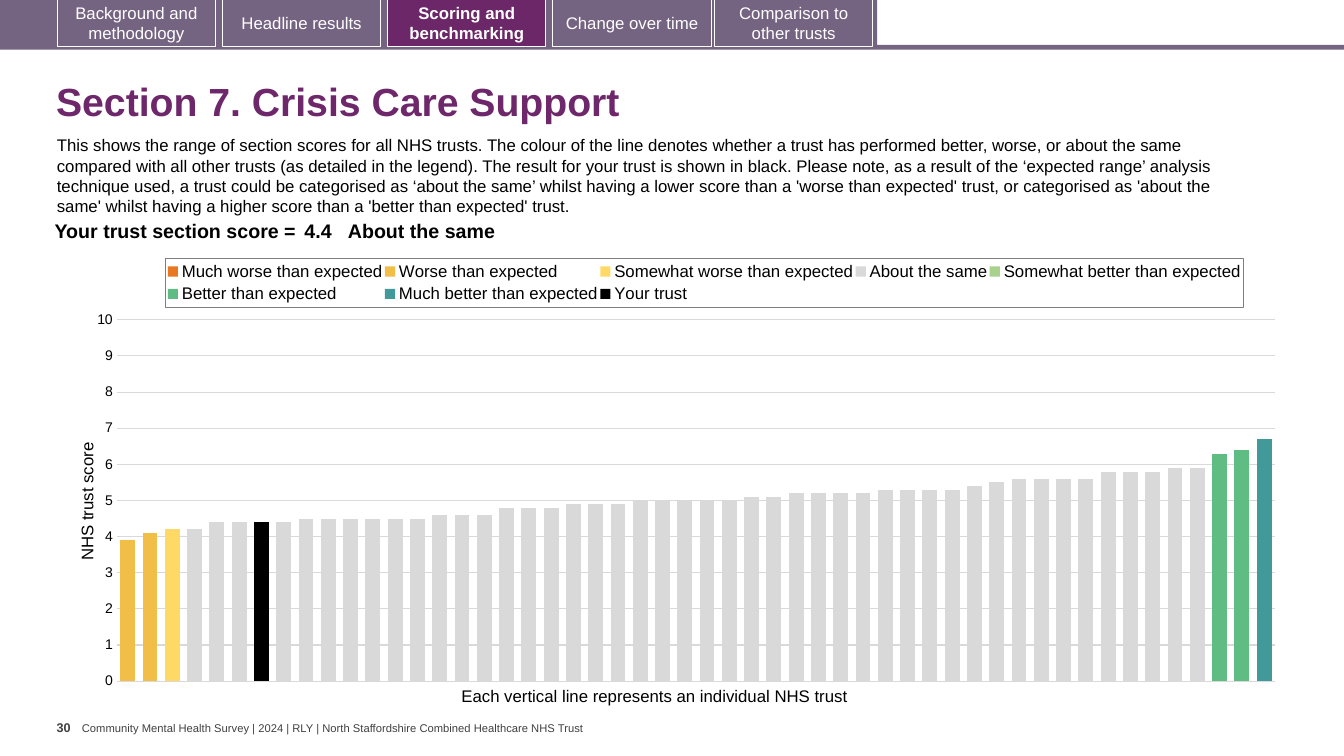
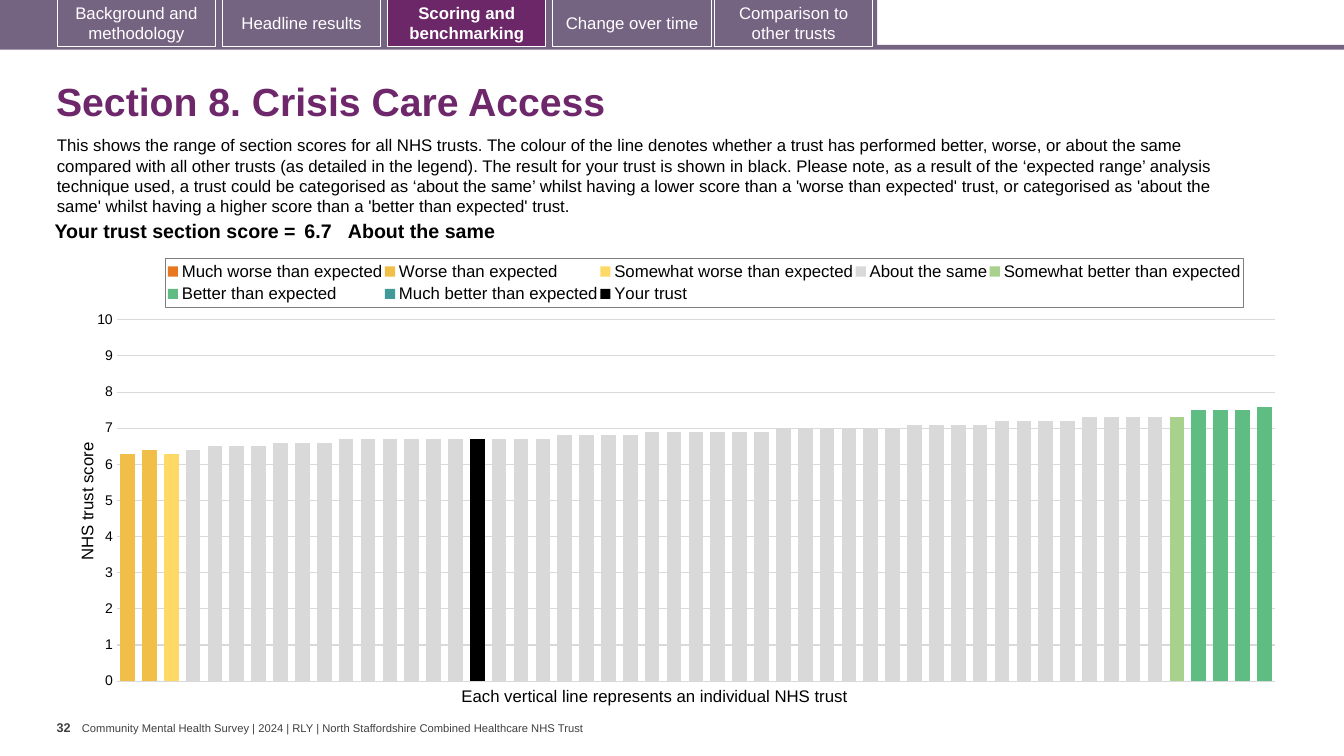
"""Build two benchmarking slides of a community mental health survey report."""
from copy import deepcopy

from lxml import etree
from pptx import Presentation
from pptx.chart.axis import CategoryAxis, ValueAxis
from pptx.chart.data import CategoryChartData
from pptx.dml.color import RGBColor
from pptx.enum.chart import XL_AXIS_CROSSES as Crosses
from pptx.enum.chart import XL_CHART_TYPE as ChartType
from pptx.enum.chart import XL_LEGEND_POSITION as LegendPosition
from pptx.enum.chart import XL_TICK_LABEL_POSITION as TickLabels
from pptx.enum.chart import XL_TICK_MARK as TickMark
from pptx.enum.shapes import MSO_SHAPE as Shape
from pptx.enum.text import MSO_ANCHOR as Anchor
from pptx.enum.text import PP_ALIGN as Align
from pptx.oxml import parse_xml
from pptx.oxml.ns import nsdecls, qn
from pptx.util import Pt

FONT = "Arial"
COLORS = {
    "band": "756382",
    "active": "6B2768",
    "title": "6D276A",
    "text": "000000",
    "footer": "404040",
    "white": "FFFFFF",
    "grid": "D9D9D9",
    "legend_border": "7F7F7F",
}
MUCH_WORSE = "Much worse than expected"
WORSE = "Worse than expected"
SOMEWHAT_WORSE = "Somewhat worse than expected"
SAME = "About the same"
SOMEWHAT_BETTER = "Somewhat better than expected"
BETTER = "Better than expected"
MUCH_BETTER = "Much better than expected"
YOUR_TRUST = "Your trust"
SERIES_COLORS = {
    MUCH_WORSE: "E87722",
    WORSE: "F1BE48",
    SOMEWHAT_WORSE: "FFD966",
    SAME: "D9D9D9",
    SOMEWHAT_BETTER: "A9D18E",
    BETTER: "5FBD83",
    MUCH_BETTER: "419999",
    YOUR_TRUST: "000000",
}
TABS = [
    (41, "Background and methodology"),
    (159, "Headline results"),
    (277, "Scoring and benchmarking"),
    (395, "Change over time"),
    (510.5, "Comparison to other trusts"),
]
ACTIVE_TAB = "Scoring and benchmarking"
FOOTER = (
    "Community Mental Health Survey | 2024 | RLY | "
    "North Staffordshire Combined Healthcare NHS Trust"
)
INTRO = (
    "This shows the range of section scores for all NHS trusts. The colour of the line denotes "
    "whether a trust has performed better, worse, or about the same compared with all other trusts "
    "(as detailed in the legend). The result for your trust is shown in black. Please note, as a "
    "result of the ‘expected range’ analysis technique used, a trust could be categorised as "
    "‘about the same’ whilst having a lower score than a 'worse than expected' trust, or "
    "categorised as 'about the same' whilst having a higher score than a 'better than expected' trust."
)
SECTIONS = [
    {
        "number": "30",
        "title": "Section 7. Crisis Care Support",
        "score": "4.4",
        "runs": [
            (WORSE, [3.9, 4.1]),
            (SOMEWHAT_WORSE, [4.2]),
            (SAME, [4.2, 4.4, 4.4]),
            (YOUR_TRUST, [4.4]),
            (SAME, [4.4] + [4.5] * 6 + [4.6] * 3 + [4.8] * 3 + [4.9] * 3 + [5] * 5
             + [5.1] * 2 + [5.2] * 4 + [5.3] * 4 + [5.4, 5.5] + [5.6] * 4
             + [5.8] * 3 + [5.9] * 2),
            (BETTER, [6.3, 6.4]),
            (MUCH_BETTER, [6.7]),
        ],
    },
    {
        "number": "32",
        "title": "Section 8. Crisis Care Access",
        "score": "6.7",
        "runs": [
            (WORSE, [6.3, 6.4]),
            (SOMEWHAT_WORSE, [6.3]),
            (SAME, [6.4] + [6.5] * 3 + [6.6] * 3 + [6.7] * 6),
            (YOUR_TRUST, [6.7]),
            (SAME, [6.7] * 3 + [6.8] * 4 + [6.9] * 6 + [7] * 6 + [7.1] * 4
             + [7.2] * 4 + [7.3] * 4),
            (SOMEWHAT_BETTER, [7.3]),
            (BETTER, [7.5, 7.5, 7.5, 7.6]),
        ],
    },
]


def rgb(name):
    return RGBColor.from_string(COLORS[name])


def style_font(font, size, color="text", bold=False):
    font.name = FONT
    font.size = Pt(size)
    font.bold = bold
    font.color.rgb = rgb(color)


def set_margins(target, left, top, right, bottom):
    target.margin_left, target.margin_top = Pt(left), Pt(top)
    target.margin_right, target.margin_bottom = Pt(right), Pt(bottom)


def add_text(page, bounds, text, size, color="text", bold=False,
             margins=(7.2, 3.6, 7.2, 3.6), anchor=Anchor.TOP):
    frame = page.shapes.add_textbox(*map(Pt, bounds)).text_frame
    frame.word_wrap = True
    frame.vertical_anchor = anchor
    set_margins(frame, *margins)
    para = frame.paragraphs[0]
    para.text = text
    style_font(para.font, size, color, bold)
    return para


def add_bar(page, bounds, fill):
    bar = page.shapes.add_shape(Shape.RECTANGLE, *map(Pt, bounds))
    bar.shadow.inherit = False
    bar.fill.solid()
    bar.fill.fore_color.rgb = rgb(fill)
    bar.line.fill.background()
    return bar


def add_tab(page, left, label):
    active = label == ACTIVE_TAB
    tab = add_bar(page, (left, 0, 113, 33), "active" if active else "band")
    tab.line.color.rgb = rgb("white")
    tab.line.width = Pt(0.75)
    frame = tab.text_frame
    frame.word_wrap = True
    frame.vertical_anchor = Anchor.MIDDLE
    para = frame.paragraphs[0]
    para.text = label
    para.alignment = Align.CENTER
    style_font(para.font, 12, "white", active)


def add_furniture(page, number):
    add_text(page, (58.5, 515.5, 364, 9.5), FOOTER, 8, "footer",
             margins=(0, 0, 0, 0), anchor=Anchor.MIDDLE)
    add_text(page, (40.5, 511, 18, 29), number, 9, "footer", True, margins=(0, 3.6, 0, 3.6))
    add_bar(page, (0, 32, 960, 3.5), "band")
    add_bar(page, (0, 0, 626.5, 34), "band")
    for left, label in TABS:
        add_tab(page, left, label)


def set_layout(parent, position, **parts):
    for old in parent.findall(qn("c:layout")):
        parent.remove(old)
    layout = etree.Element(qn("c:layout"))
    manual = etree.SubElement(layout, qn("c:manualLayout"))
    if position == 0:
        etree.SubElement(manual, qn("c:layoutTarget")).set("val", "inner")
    for mode in ("xMode", "yMode"):
        etree.SubElement(manual, qn(f"c:{mode}")).set("val", "edge")
    for part, value in parts.items():
        etree.SubElement(manual, qn(f"c:{part}")).set("val", str(value))
    parent.insert(position, layout)


def move_last_series_to_right_axis(plot_area):
    left_bars = plot_area.find(qn("c:barChart"))
    right_bars = deepcopy(left_bars)
    left_bars.addnext(right_bars)
    left_bars.remove(left_bars.findall(qn("c:ser"))[-1])
    for series in right_bars.findall(qn("c:ser"))[:-1]:
        right_bars.remove(series)
    value_xml = plot_area.find(qn("c:valAx"))
    right_value = deepcopy(value_xml)
    right_category = deepcopy(plot_area.find(qn("c:catAx")))
    value_xml.addnext(right_value)
    right_value.addnext(right_category)
    for part in (right_bars, right_value, right_category):
        for tag in ("c:axId", "c:crossAx"):
            for link in part.findall(qn(tag)):
                link.set("val", str(int(link.get("val")) + 1))
    right_value.find(qn("c:axPos")).set("val", "r")
    axis = ValueAxis(right_value)
    axis.has_major_gridlines = False
    axis.has_title = False
    axis.tick_label_position = TickLabels.NONE
    CategoryAxis(right_category).crosses = Crosses.MAXIMUM


def style_value_axis(axis):
    axis.minimum_scale, axis.maximum_scale, axis.major_unit = 0, 10, 1
    axis.major_tick_mark = axis.minor_tick_mark = TickMark.NONE
    axis.format.line.fill.background()
    style_font(axis.tick_labels.font, 10)
    axis.has_major_gridlines = True
    axis.major_gridlines.format.line.color.rgb = rgb("grid")
    axis.major_gridlines.format.line.width = Pt(0.75)
    para = axis.axis_title.text_frame.paragraphs[0]
    para.text = "NHS trust score"
    style_font(para.font, 12)


def style_legend(chart):
    chart.has_legend = True
    chart.legend.position = LegendPosition.TOP
    chart.legend.include_in_layout = False
    style_font(chart.legend.font, 12)
    legend = chart.element.xpath("c:chart/c:legend")[0]
    set_layout(legend, 1, x=0.08, y=0.02, w=0.88, h=0.11)
    legend.find(qn("c:txPr")).addprevious(parse_xml(
        f'<c:spPr {nsdecls("c", "a")}><a:ln w="9525"><a:solidFill>'
        f'<a:srgbClr val="{COLORS["legend_border"]}"/></a:solidFill></a:ln></c:spPr>'))


def add_score_chart(page, runs):
    trusts = [(band, score) for band, scores in runs for score in scores]
    data = CategoryChartData()
    data.categories = [str(place) for place in range(1, len(trusts) + 1)]
    for name in SERIES_COLORS:
        data.add_series(name, [score if band == name else None for band, score in trusts])
    chart = page.shapes.add_chart(
        ChartType.COLUMN_CLUSTERED, Pt(48.25), Pt(178), Pt(875), Pt(319.5), data).chart
    chart.has_title = False
    style_font(chart.font, 10)
    plot = chart.plots[0]
    plot.gap_width, plot.overlap, plot.vary_by_categories = 50, 100, False
    for series in plot.series:
        series.format.fill.solid()
        series.format.fill.fore_color.rgb = RGBColor.from_string(SERIES_COLORS[series.name])
    chart.category_axis.visible = False
    style_value_axis(chart.value_axis)
    style_legend(chart)
    plot_area = chart.element.xpath("c:chart/c:plotArea")[0]
    set_layout(plot_area.find(qn("c:valAx")).find(qn("c:title")), 1, x=0.005, y=0.425)
    move_last_series_to_right_axis(plot_area)
    set_layout(plot_area, 0, x=0.04, y=0.158, w=0.946, h=0.808)


def add_score_table(page, score):
    table = page.shapes.add_table(1, 3, Pt(25), Pt(155), Pt(842), Pt(22)).table
    table.first_row = table.horz_banding = False
    columns = [
        (189.5, "Your trust section score =", Align.RIGHT, 3),
        (34, score, Align.LEFT, 3),
        (618.5, SAME, Align.LEFT, 0),
    ]
    for index, (width, text, alignment, side) in enumerate(columns):
        table.columns[index].width = Pt(width)
        cell = table.cell(0, index)
        cell.fill.background()
        set_margins(cell, side, 3, side, 3)
        para = cell.text_frame.paragraphs[0]
        para.text = text
        para.alignment = alignment
        style_font(para.font, 14, bold=True)


def add_section_page(deck, section):
    page = deck.slides.add_slide(deck.slide_layouts[6])
    add_furniture(page, section["number"])
    title = add_text(page, (33, 48, 899, 52), section["title"], 28, "title", True,
                     anchor=Anchor.MIDDLE)
    title.line_spacing = 0.9
    add_text(page, (33.5, 93, 873.5, 65.5), INTRO, 12)
    add_text(page, (322.5, 486, 296, 22), "Each vertical line represents an individual NHS trust", 12)
    add_score_chart(page, section["runs"])
    add_score_table(page, section["score"])


def main():
    deck = Presentation()
    deck.slide_width, deck.slide_height = Pt(960), Pt(540)
    for section in SECTIONS:
        add_section_page(deck, section)
    deck.save("out.pptx")


if __name__ == "__main__":
    main()
